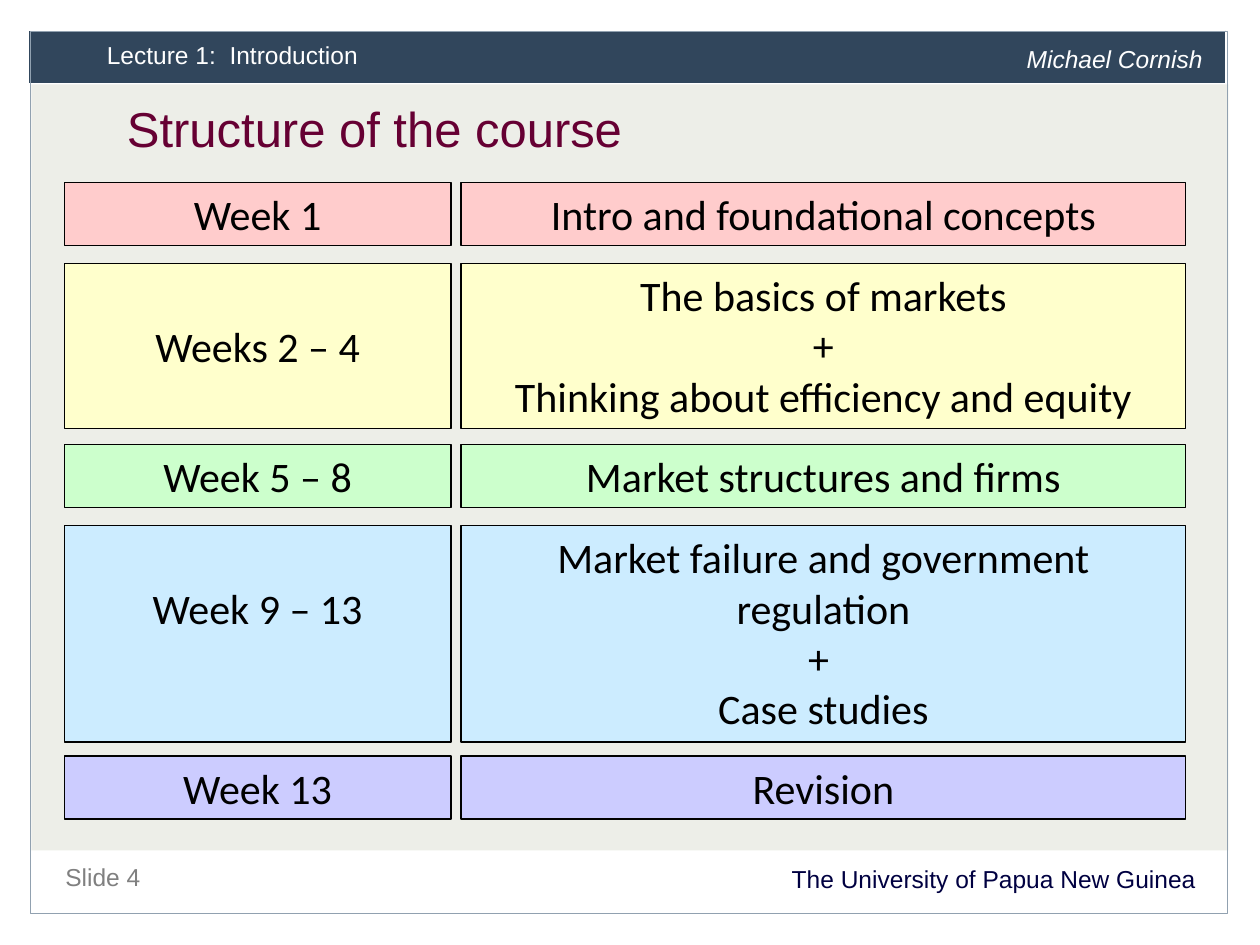
from pptx import Presentation
from pptx.dml.color import RGBColor
from pptx.enum import shapes, text
from pptx.util import Inches, Pt

COLOURS = {
    "panel": "EDEEE8", "banner": "31465C", "frame": "91A1B0",
    "white": "FFFFFF", "black": "000000", "navy": "000041",
    "grey": "808080", "plum": "660033",
    "pink": "FFCCCC", "yellow": "FFFFCC", "green": "CCFFCC",
    "blue": "CCECFF", "violet": "CCCCFF",
}

# text, box, size, line spacing, colour, right-aligned, italic
LABELS = [
    ("The University of Papua New Guinea", (0.42, 6.83, 9.17, 0.32), 14, 15, "navy", True, False),
    ("Slide 4", (0.42, 6.75, 4.33, 0.34), 14, 20, "grey", False, False),
    ("Lecture 1:  Introduction", (0.75, 0.25, 6.13, 0.37), 14, 18, "white", False, False),
    ("Michael Cornish", (8.05, 0.28, 1.64, 0.37), 14, 18, "white", False, True),
    ("Structure of the course", (0.91, 0.84, 8.13, 0.75), 28, 26, "plum", False, False),
]

# weeks, topics, colour, top, height
SCHEDULE = [
    ("Week 1", ["Intro and foundational concepts"], "pink", 1.45, 0.5),
    ("Weeks 2 – 4", ["The basics of markets", "+", "Thinking about efficiency and equity"],
     "yellow", 2.09, 1.31),
    ("Week 5 – 8", ["Market structures and firms"], "green", 3.53, 0.5),
    ("Week 9 – 13", ["Market failure and government regulation", "+ ", "Case studies"],
     "blue", 4.17, 1.72),
    ("Week 13", ["Revision"], "violet", 6, 0.5),
]
WEEKS_LEFT, WEEKS_WIDTH = 0.51, 3.07
TOPICS_LEFT, TOPICS_WIDTH = 3.66, 5.75
MARGIN, LINE_HEIGHT = 0.05, 0.4


def rgb(name):
    return RGBColor.from_string(COLOURS[name])


def add_box(slide, box, fill=None, line=None, width=0.75):
    rect = slide.shapes.add_shape(shapes.MSO_SHAPE.RECTANGLE, *map(Inches, box))
    rect.shadow.inherit = False
    if fill:
        rect.fill.solid()
        rect.fill.fore_color.rgb = rgb(fill)
    else:
        rect.fill.background()
    if line:
        rect.line.color.rgb = rgb(line)
        rect.line.width = Pt(width)
    else:
        rect.line.fill.background()
    return rect


def style(paragraph, face, size, colour, align):
    paragraph.alignment = align
    paragraph.font.name = face
    paragraph.font.size = Pt(size)
    paragraph.font.color.rgb = rgb(colour)


def add_label(slide, words, box, size, spacing, colour, right, italic):
    frame = slide.shapes.add_textbox(*map(Inches, box)).text_frame
    frame.word_wrap = True
    frame.text = words
    line = frame.paragraphs[0]
    line.line_spacing = Pt(spacing)
    style(line, "Arial", size, colour, text.PP_ALIGN.RIGHT if right else text.PP_ALIGN.LEFT)
    line.font.italic = italic


def add_cell(slide, lines, box, fill, skipped_lines=0):
    """Draw a schedule box whose text starts some lines below its top."""
    frame = add_box(slide, box, fill, "black").text_frame
    frame.word_wrap = True
    frame.vertical_anchor = text.MSO_ANCHOR.TOP
    frame.margin_top = Inches(MARGIN + skipped_lines * LINE_HEIGHT)
    frame.text = "\n".join(lines)
    for paragraph in frame.paragraphs:
        style(paragraph, "Calibri", 24, "black", text.PP_ALIGN.CENTER)


def main():
    deck = Presentation()
    deck.slide_width, deck.slide_height = Inches(10), Inches(7.5)
    slide = deck.slides.add_slide(deck.slide_layouts[6])

    add_box(slide, (0.25, 0.67, 9.5, 6.08), "panel")
    add_box(slide, (0.23, 0.24, 9.5, 0.42), "banner", "white", 0.5)
    add_box(slide, (0.24, 0.25, 9.5, 7), line="frame")
    for label in LABELS:
        add_label(slide, *label)

    for weeks, topics, colour, top, height in SCHEDULE:
        add_cell(slide, [weeks], (WEEKS_LEFT, top, WEEKS_WIDTH, height), colour,
                 skipped_lines=1 if len(topics) > 1 else 0)
        add_cell(slide, topics, (TOPICS_LEFT, top, TOPICS_WIDTH, height), colour)

    deck.save("out.pptx")


if __name__ == "__main__":
    main()
